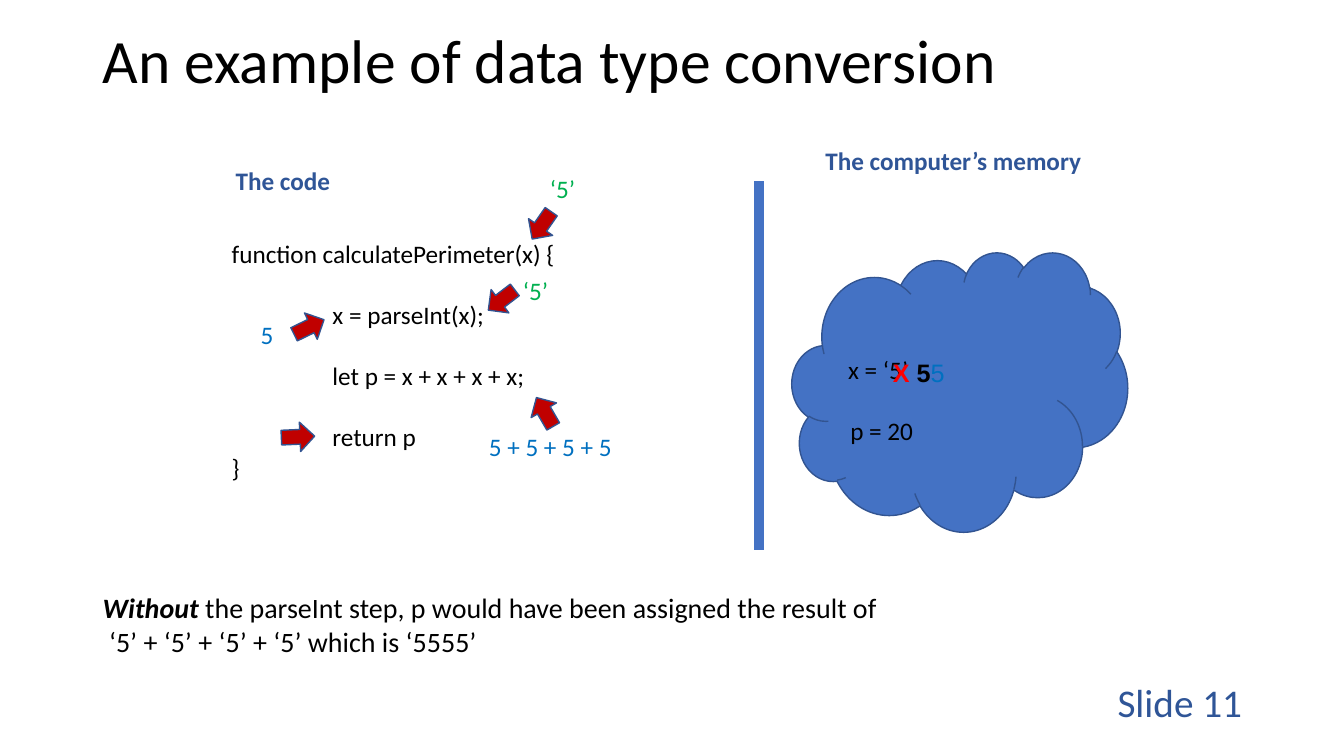
from dataclasses import dataclass

import pptx
import pptx.dml.color
import pptx.enum.shapes
import pptx.enum.text
import pptx.oxml
import pptx.util

Cm = pptx.util.Cm
Pt = pptx.util.Pt
Align = pptx.enum.text.PP_ALIGN
Anchor = pptx.enum.text.MSO_ANCHOR
Kind = pptx.enum.shapes.MSO_SHAPE

BLACK = "000000"
NAVY = "2F5597"
BLUE = "4472C4"
EDGE = "325491"
CRIMSON = "C00000"
GREEN = "00B050"
SKY = "0070C0"
RED = "FF0000"


@dataclass
class Run:
    text: str
    color: str = BLACK
    size: float = 18
    bold: bool = False
    slant: bool = False
    font: str = "Calibri"


@dataclass
class Line:
    runs: list[Run]
    indent: float = 0
    before: float = 0
    align: Align = Align.LEFT
    pitch: float = 1.0


@dataclass
class Label:
    left: float
    top: float
    width: float
    lines: list[Line]
    height: float = 1.02
    anchor: Anchor = Anchor.TOP


@dataclass
class Arrow:
    left: float
    top: float
    angle: float


def paint(color: str) -> pptx.dml.color.RGBColor:
    return pptx.dml.color.RGBColor.from_string(color)


def write(frame, lines: list[Line]) -> None:
    frame.word_wrap = True
    for index, line in enumerate(lines):
        para = frame.add_paragraph() if index else frame.paragraphs[0]
        para.alignment = line.align
        para.line_spacing = line.pitch
        para.space_before = Pt(line.before)
        if line.indent:
            para._p.get_or_add_pPr().set("marL", str(Cm(line.indent)))
        for part in line.runs:
            run = para.add_run()
            run.text = part.text
            run.font.name = part.font
            run.font.size = Pt(part.size)
            run.font.bold = part.bold
            run.font.italic = part.slant
            run.font.color.rgb = paint(part.color)


def add_label(slide, label: Label) -> None:
    box = slide.shapes.add_textbox(
        Cm(label.left), Cm(label.top), Cm(label.width), Cm(label.height))
    box.text_frame.vertical_anchor = label.anchor
    write(box.text_frame, label.lines)


def add_solid(slide, kind: Kind, left: float, top: float,
              width: float, height: float, fill: str):
    shape = slide.shapes.add_shape(
        kind, Cm(left), Cm(top), Cm(width), Cm(height))
    shape.shadow.inherit = False
    shape.fill.solid()
    shape.fill.fore_color.rgb = paint(fill)
    shape.line.color.rgb = paint(EDGE)
    shape.line.width = Pt(1)
    return shape


def add_cloud(slide) -> None:
    cloud = add_solid(slide, Kind.CLOUD, 19.96, 6.35, 8.46, 7.04, BLUE)
    frame = cloud.text_frame
    frame.vertical_anchor = Anchor.MIDDLE
    frame.margin_bottom = Cm(0.9)
    write(frame, [Line([Run("x = ‘5’")])])


def add_arrow(slide, arrow: Arrow) -> None:
    shape = add_solid(slide, Kind.RIGHT_ARROW, arrow.left, arrow.top,
                      0.84, 0.74, CRIMSON)
    shape.rotation = arrow.angle


def add_wall(slide) -> None:
    wall = slide.shapes.add_connector(
        pptx.enum.shapes.MSO_CONNECTOR.STRAIGHT,
        Cm(19.13), Cm(4.57), Cm(19.13), Cm(13.87))
    wall.line.color.rgb = paint(BLUE)
    wall.line.width = Pt(7)
    wall._element.spPr.append(pptx.oxml.parse_xml(
        '<a:effectLst xmlns:a='
        '"http://schemas.openxmlformats.org/drawingml/2006/main"/>'))


CODE = [Line([Run("function calculatePerimeter(x) {")])]
CODE += [Line([Run(step)], indent=2.54, before=22)
         for step in ("x = parseInt(x);", "let p = x + x + x + x;", "return p")]
CODE += [Line([Run("}")])]

LABELS = [
    Label(2.34, 0.43, 29.21,
          [Line([Run("An example of data type conversion", size=44)], pitch=0.9)],
          2.36, Anchor.MIDDLE),
    Label(23.93, 17.17, 7.62,
          [Line([Run("Slide 11", NAVY, 28)], align=Align.RIGHT)],
          anchor=Anchor.MIDDLE),
    Label(5.59, 5.89, 12.5, CODE, 6.4),
    Label(5.69, 4.04, 12.9, [Line([Run("The code", NAVY, bold=True)])]),
    Label(20.55, 3.53, 7.62,
          [Line([Run("The computer’s memory", NAVY, bold=True)])]),
    Label(13.61, 4.24, 1.93, [Line([Run("‘5’", GREEN)])]),
    Label(12.93, 6.81, 1.93, [Line([Run("‘5’", GREEN)])]),
    Label(6.32, 7.92, 1.93, [Line([Run("5", SKY)])]),
    Label(12.07, 10.74, 7.47, [Line([Run("5 + 5 + 5 + 5", SKY)])]),
    Label(22.25, 8.89, 4.65, [Line([
        Run("X ", RED, bold=True, font="Arial"),
        Run("5", bold=True, font="Arial"),
        Run("5", SKY, font="Arial")])]),
    Label(21.18, 10.34, 2.97, [Line([Run("p = 20")])]),
    Label(2.34, 14.76, 29.21, [
        Line([Run("Without", size=20, bold=True, slant=True),
              Run(" the parseInt step, p would have been assigned"
                  " the result of", size=20)]),
        Line([Run(" ‘5’ + ‘5’ + ‘5’ + ‘5’ which is ‘5555’", size=20)])], 1.96),
]

ARROWS = [
    Arrow(13.23, 5.31, 124.8),
    Arrow(12.22, 7.19, 142.6),
    Arrow(7.37, 7.87, 334),
    Arrow(13.31, 10.01, 239.9),
    Arrow(7.09, 10.64, 357.4),
]


def main() -> None:
    deck = pptx.Presentation()
    deck.slide_width = Cm(33.87)
    deck.slide_height = Cm(19.05)
    slide = deck.slides.add_slide(deck.slide_layouts[6])
    add_wall(slide)
    add_cloud(slide)
    for arrow in ARROWS:
        add_arrow(slide, arrow)
    for label in LABELS:
        add_label(slide, label)
    deck.save("out.pptx")


if __name__ == "__main__":
    main()
